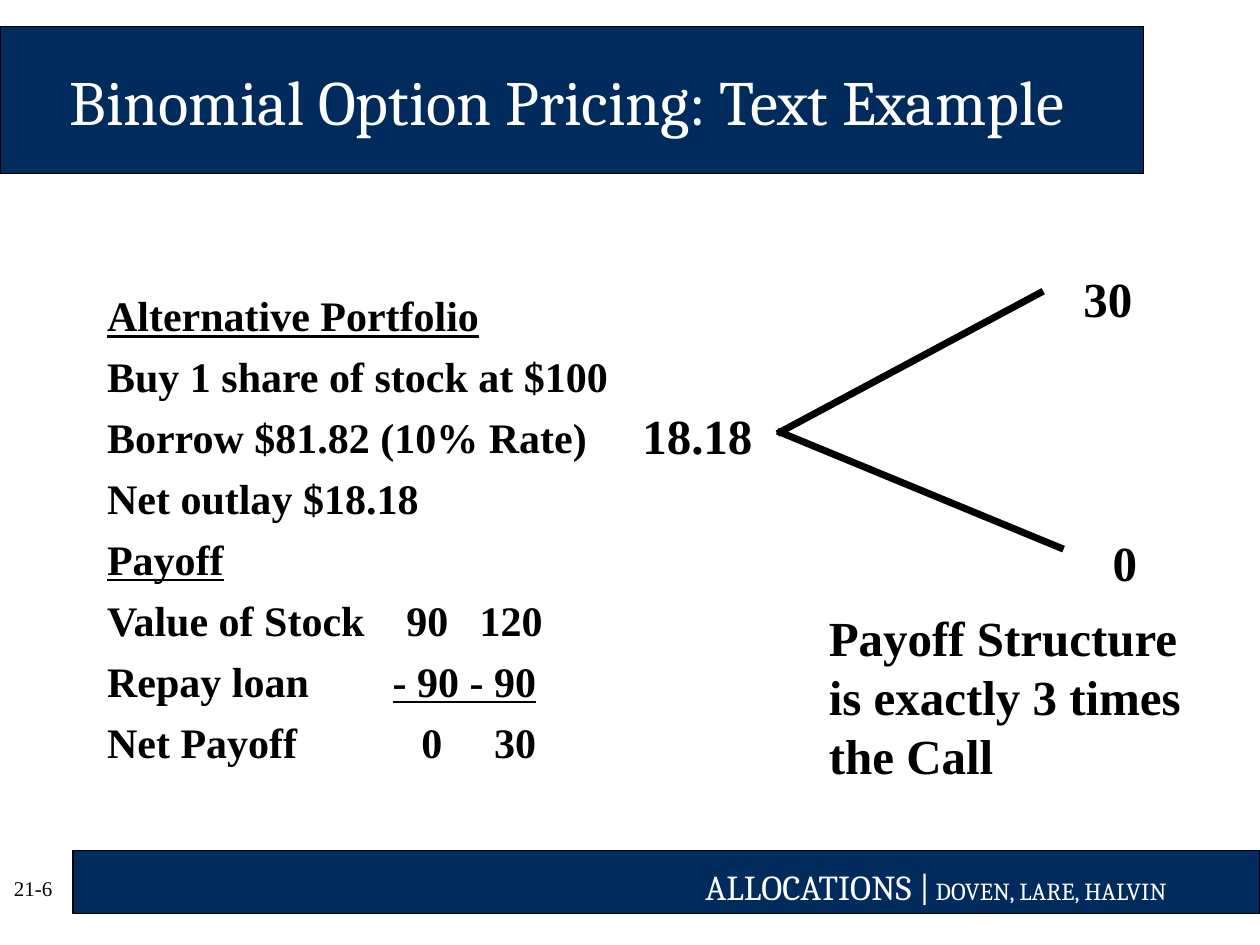
from lxml.etree import SubElement
from pptx import Presentation
from pptx.dml.color import RGBColor
from pptx.enum.shapes import MSO_CONNECTOR, MSO_SHAPE
from pptx.enum.text import MSO_ANCHOR
from pptx.oxml.ns import qn
from pptx.util import Cm, Pt

COLORS = {"navy": "002B5C", "black": "000000", "white": "FFFFFF"}
SERIF, HEADING = "Times New Roman", "Cambria"

TITLE_FORMAT = {"name": HEADING, "size": Pt(36), "color": "white"}
ROW_FORMAT = {"name": SERIF, "size": Pt(24), "bold": True, "color": "black"}
HEAD_FORMAT = {**ROW_FORMAT, "underline": True}
TREE_FORMAT = {**ROW_FORMAT, "size": Pt(28)}
PAGE_FORMAT = {"name": SERIF, "size": Pt(12), "color": "black"}
BOOK_FORMAT = {"name": HEADING, "size": Pt(20), "color": "white"}
AUTHOR_FORMAT = {**BOOK_FORMAT, "size": Pt(14)}

PORTFOLIO_ROWS = [
    ([("Alternative Portfolio", HEAD_FORMAT)], []),
    ([("Buy 1 share of stock at $100", ROW_FORMAT)], []),
    ([("Borrow $81.82 (10% Rate)", ROW_FORMAT)], []),
    ([("Net outlay $18.18", ROW_FORMAT)], []),
    ([("Payoff", HEAD_FORMAT)], []),
    ([("Value of Stock\t90\t120", ROW_FORMAT)], [6.88, 8.78]),
    ([("Repay loan\t", ROW_FORMAT), ("- 90 - 90", HEAD_FORMAT)], [8.65]),
    ([("Net Payoff\t0\t30", ROW_FORMAT)], [6.76, 8.65]),
]
TREE_LABELS = [
    (["18.18"], (12.7, 8.05, 2.72, 1.42)),
    (["30"], (21.59, 5.28, 1.5, 1.42)),
    (["0"], (22.18, 10.62, 1, 1.42)),
    (["Payoff Structure", "is exactly 3 times", "the Call"],
     (16.46, 12.12, 8, 3.81)),
]
BRANCHES = [(15.67, 8.74, 21.03, 5.87), (15.67, 8.69, 21.44, 11.07)]


def rgb(color):
    return RGBColor.from_string(COLORS[color])


def write_runs(paragraph, runs):
    for text, values in runs:
        run = paragraph.add_run()
        run.text = text
        for name, value in values.items():
            if name == "color":
                run.font.color.rgb = rgb(value)
            else:
                setattr(run.font, name, value)


def add_band(slide, box):
    shape = slide.shapes.add_shape(MSO_SHAPE.RECTANGLE, *map(Cm, box))
    shape.shadow.inherit = False
    shape.fill.solid()
    shape.fill.fore_color.rgb = rgb("navy")
    shape.line.color.rgb = rgb("black")
    shape.line.width = Pt(0.75)
    slide.shapes.title.element.addprevious(shape.element)


def add_text(slide, box, lines, wrap=True, anchor=MSO_ANCHOR.TOP):
    text_frame = slide.shapes.add_textbox(*map(Cm, box)).text_frame
    text_frame.word_wrap = wrap
    text_frame.vertical_anchor = anchor
    for index, runs in enumerate(lines):
        paragraph = text_frame.add_paragraph() if index else text_frame.paragraphs[0]
        write_runs(paragraph, runs)
    return text_frame


def add_branch(slide, ends):
    connector = slide.shapes.add_connector(MSO_CONNECTOR.STRAIGHT, *map(Cm, ends))
    connector.line.color.rgb = rgb("black")
    connector.line.width = Pt(4)
    SubElement(connector.element.spPr, qn("a:effectLst"))


def fill_title(title):
    box = {"left": 0, "top": 0.43, "width": 22.86, "height": 3.18}
    for name, value in box.items():
        setattr(title, name, Cm(value))
    write_runs(title.text_frame.paragraphs[0],
               [("Binomial Option Pricing: Text Example", TITLE_FORMAT)])


def set_tab_stops(paragraph, stops):
    tabs = SubElement(paragraph._p.get_or_add_pPr(), qn("a:tabLst"))
    for stop in stops:
        SubElement(tabs, qn("a:tab"), pos=str(Cm(stop)), algn="r")


def add_portfolio(slide):
    text_frame = add_text(slide, (1.91, 5.72, 10.72, 9.88),
                          [runs for runs, stops in PORTFOLIO_ROWS])
    for paragraph, (runs, stops) in zip(text_frame.paragraphs, PORTFOLIO_ROWS):
        paragraph.space_before = Pt(6)
        if stops:
            set_tab_stops(paragraph, stops)


def main():
    presentation = Presentation()
    presentation.slide_width, presentation.slide_height = Cm(25.4), Cm(19.05)
    slide = presentation.slides.add_slide(presentation.slide_layouts[5])

    add_band(slide, (0, 0.53, 23.06, 2.97))
    add_band(slide, (1.47, 17.15, 23.93, 1.27))
    fill_title(slide.shapes.title)
    add_portfolio(slide)
    for lines, box in TREE_LABELS:
        add_text(slide, box, [[(line, TREE_FORMAT)] for line in lines], wrap=False)
    for ends in BRANCHES:
        add_branch(slide, ends)
    add_text(slide, (0.03, 17.4, 1.8, 1.02), [[("21-6", PAGE_FORMAT)]],
             anchor=MSO_ANCHOR.MIDDLE)
    add_text(slide, (13.97, 17.32, 11.43, 1.09),
             [[("ALLOCATIONS |", BOOK_FORMAT),
               (" DOVEN, LARE, HALVIN", AUTHOR_FORMAT)]])

    presentation.save("out.pptx")


if __name__ == "__main__":
    main()
